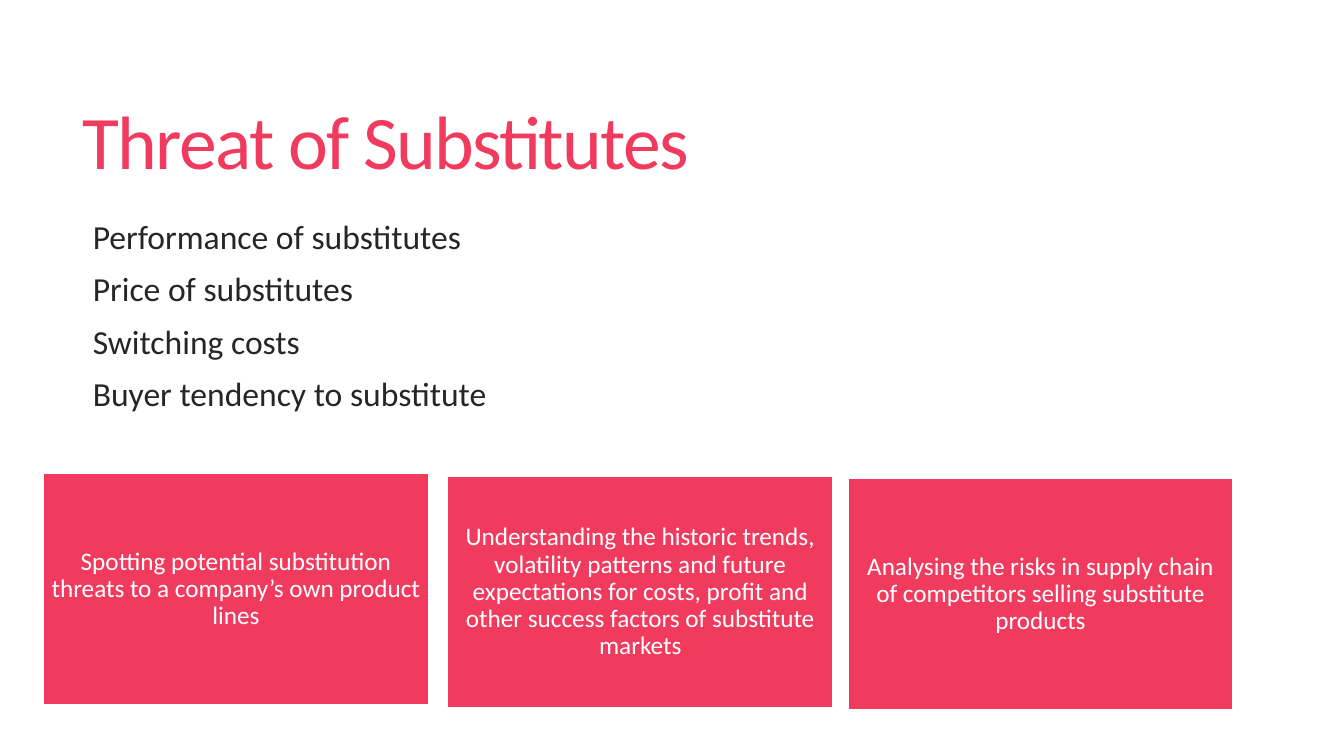
"""Build the Threat of Substitutes slide."""
from dataclasses import dataclass
from typing import Any

from lxml import etree
from pptx import Presentation
from pptx.dml.color import RGBColor
from pptx.enum.shapes import MSO_SHAPE
from pptx.enum.text import MSO_ANCHOR, MSO_AUTO_SIZE, PP_ALIGN
from pptx.oxml.ns import qn
from pptx.slide import Slide
from pptx.util import Inches, Pt

RECTANGLE = MSO_SHAPE.RECTANGLE
TOP, MIDDLE = MSO_ANCHOR.TOP, MSO_ANCHOR.MIDDLE
NO_AUTOFIT = MSO_AUTO_SIZE.NONE
LEFT, CENTER = PP_ALIGN.LEFT, PP_ALIGN.CENTER
TITLE_AND_CONTENT = 1


@dataclass(frozen=True)
class Theme:
    """Colours, font and type sizes of the slide."""
    accent: RGBColor = RGBColor(0xF0, 0x3B, 0x5E)
    ink: RGBColor = RGBColor(0x26, 0x26, 0x26)
    white: RGBColor = RGBColor(0xFF, 0xFF, 0xFF)
    font: str = "Calibri"
    title_size: Pt = Pt(54)
    factor_size: Pt = Pt(24)
    action_size: Pt = Pt(18)


@dataclass(frozen=True)
class Action:
    """A boxed action and its top left corner in inches."""
    text: str
    left: float
    top: float


THEME = Theme()
ACTION_WIDTH, ACTION_HEIGHT, ACTION_INSET = Inches(3.82), Inches(2.29), Inches(0.07)
FACTORS = (
    "Performance of substitutes",
    "Price of substitutes",
    "Switching costs",
    "Buyer tendency to substitute",
)
ACTIONS = (
    Action("Spotting potential substitution threats to a company’s own product lines",
           0.43, 4.7),
    Action("Understanding the historic trends, volatility patterns and future expectations "
           "for costs, profit and other success factors of substitute markets", 4.44, 4.73),
    Action("Analysing the risks in supply chain of competitors selling substitute products",
           8.41, 4.75),
)


def apply(target: Any, **values: Any) -> None:
    """Set each named attribute on the target."""
    for name, value in values.items():
        setattr(target, name, value)


def place(shape: Any, left: float, top: float, width: float, height: float) -> None:
    """Move and size a shape, in inches."""
    apply(shape, left=Inches(left), top=Inches(top),
          width=Inches(width), height=Inches(height))


def style(paragraph: Any, size: Pt, color: RGBColor, **layout: Any) -> None:
    """Format a paragraph and all its runs."""
    apply(paragraph, **layout)
    for run in paragraph.runs:
        apply(run.font, name=THEME.font, size=size)
        run.font.color.rgb = color


def add_title(slide: Slide) -> None:
    """Fill the title placeholder with tightened type."""
    title = slide.shapes.title
    place(title, 0.72, 0.55, 11.78, 1.81)
    title.text_frame.text = "Threat of Substitutes"
    apply(title.text_frame, vertical_anchor=MIDDLE, auto_size=NO_AUTOFIT)
    heading = title.text_frame.paragraphs[0]
    style(heading, THEME.title_size, THEME.accent, alignment=LEFT, line_spacing=0.85)
    heading.runs[0].font._element.set("spc", "-120")


def add_factors(slide: Slide) -> None:
    """List the factors with blank bullets in the body placeholder."""
    body = slide.placeholders[1]
    place(body, 0.72, 2.15, 6.34, 4.24)
    body.text_frame.text = "\n".join(FACTORS)
    apply(body.text_frame, vertical_anchor=TOP, auto_size=NO_AUTOFIT)
    for factor in body.text_frame.paragraphs:
        style(factor, THEME.factor_size, THEME.ink, alignment=LEFT,
              line_spacing=0.85, space_before=Pt(13))
        properties = factor._p.get_or_add_pPr()
        properties.set("marL", str(Inches(0.1)))
        properties.set("indent", str(-Inches(0.1)))
        etree.SubElement(properties, qn("a:buChar")).set("char", " ")


def add_action(slide: Slide, action: Action) -> None:
    """Draw one action box with centred text."""
    box = slide.shapes.add_shape(RECTANGLE, Inches(action.left), Inches(action.top),
                                 ACTION_WIDTH, ACTION_HEIGHT)
    box.shadow.inherit = False
    box.fill.solid()
    box.fill.fore_color.rgb = THEME.accent
    box.line.color.rgb = THEME.white
    box.line.width = Pt(1)
    box.text_frame.text = action.text
    apply(box.text_frame, word_wrap=True, vertical_anchor=MIDDLE,
          margin_left=ACTION_INSET, margin_right=ACTION_INSET,
          margin_top=ACTION_INSET, margin_bottom=ACTION_INSET)
    style(box.text_frame.paragraphs[0], THEME.action_size, THEME.white,
          alignment=CENTER, line_spacing=0.9)


def main() -> None:
    """Assemble and save the slide."""
    deck = Presentation()
    apply(deck, slide_width=Inches(13.33), slide_height=Inches(7.5))
    slide = deck.slides.add_slide(deck.slide_layouts[TITLE_AND_CONTENT])
    add_title(slide)
    add_factors(slide)
    for action in ACTIONS:
        add_action(slide, action)
    deck.save("out.pptx")


if __name__ == "__main__":
    main()
